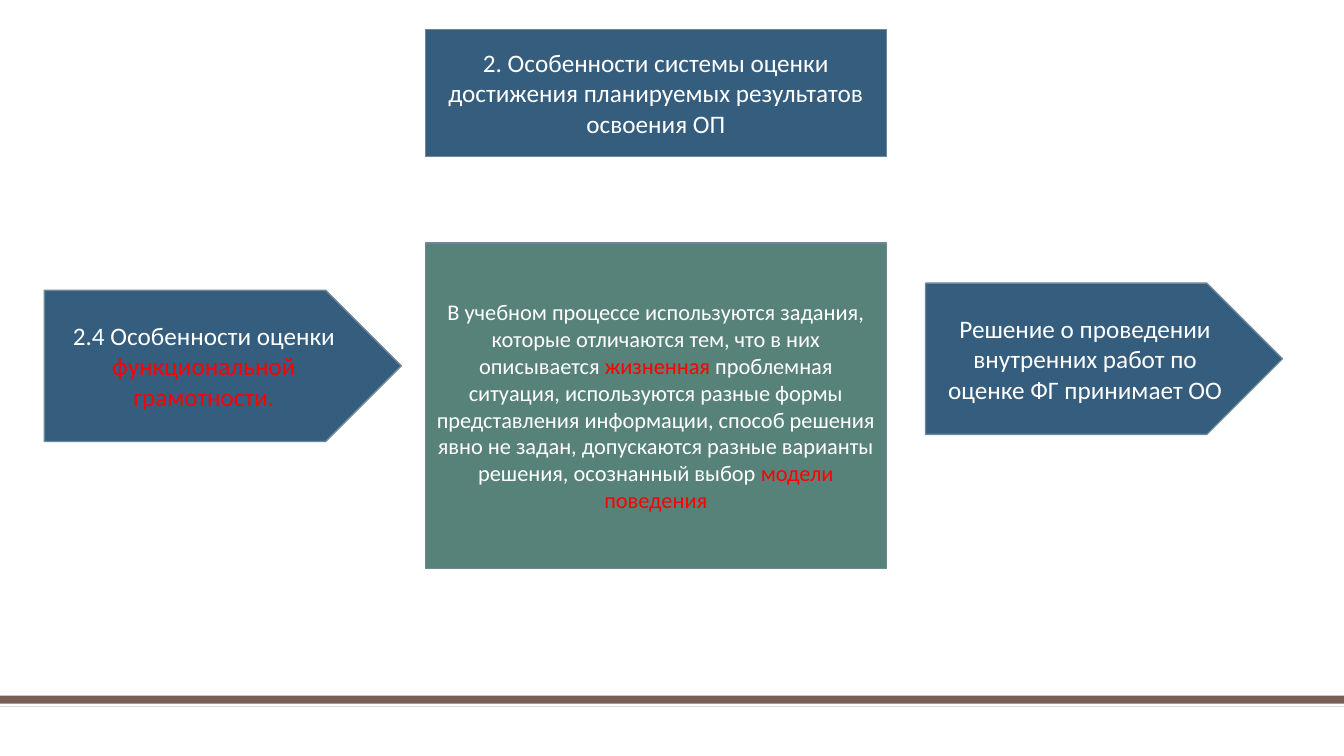
"""Build a slide on how achievement of planned learning results is assessed."""
from typing import NamedTuple

from pptx import Presentation
from pptx import util as u
from pptx.dml.color import RGBColor
from pptx.enum import shapes, text

PX = u.Inches(0.01)
SLIDE_WIDTH, SLIDE_HEIGHT = 1333, 750

WHITE = RGBColor(0xFF, 0xFF, 0xFF)
RED = RGBColor(0xFF, 0x00, 0x00)
BLUE = RGBColor(0x35, 0x5D, 0x7E)
GREEN = RGBColor(0x57, 0x82, 0x79)
OUTLINE = RGBColor(0x6D, 0x87, 0x9B)
BROWN = RGBColor(0x77, 0x5F, 0x55)

RECTANGLE = shapes.MSO_SHAPE.RECTANGLE
ARROW = shapes.MSO_SHAPE.PENTAGON


class Box(NamedTuple):
    left: int
    top: int
    width: int
    height: int


class Run(NamedTuple):
    text: str
    color: RGBColor = WHITE


class Block(NamedTuple):
    kind: shapes.MSO_SHAPE
    box: Box
    fill: RGBColor
    runs: list[Run]
    size: int = 18


FOOTER_BARS = [
    (Box(0, 690, SLIDE_WIDTH, 11), BROWN),
    (Box(0, 698, SLIDE_WIDTH, 3), WHITE),
]

TITLE_BOX = Box(422, 29, 457, 126)
TITLE = [Run("2. Особенности системы оценки достижения планируемых результатов освоения ОП")]

BLOCKS = [
    Block(ARROW, Box(44, 288, 354, 150), BLUE, [
        Run("2.4 Особенности оценки "),
        Run("функциональной грамотности.", RED),
    ]),
    Block(RECTANGLE, Box(422, 241, 457, 323), GREEN, [
        Run("В учебном процессе используются задания, которые отличаются тем, "
            "что в них описывается "),
        Run("жизненная ", RED),
        Run("проблемная ситуация, используются разные формы представления "
            "информации, способ решения явно не задан, допускаются разные "
            "варианты решения, осознанный выбор "),
        Run("модели поведения", RED),
    ], size=16),
    Block(ARROW, Box(918, 281, 354, 150), BLUE, [
        Run("Решение о проведении внутренних работ по оценке ФГ принимает ОО"),
    ]),
]


def add_box(slide, kind: shapes.MSO_SHAPE, box: Box):
    shape = slide.shapes.add_shape(kind, *(side * PX for side in box))
    shape.shadow.inherit = False
    return shape


def paint(shape, fill: RGBColor, *, outline: RGBColor | None = None) -> None:
    shape.fill.solid()
    shape.fill.fore_color.rgb = fill
    if outline is None:
        shape.line.fill.background()
    else:
        shape.line.color.rgb = outline
        shape.line.width = u.Pt(1)


def write(shape, runs: list[Run], *, size: int = 18, font: str = "Calibri") -> None:
    frame = shape.text_frame
    frame.word_wrap = True
    frame.auto_size = text.MSO_AUTO_SIZE.NONE
    frame.vertical_anchor = text.MSO_ANCHOR.MIDDLE
    paragraph = frame.paragraphs[0]
    paragraph.alignment = text.PP_ALIGN.CENTER
    for item in runs:
        run = paragraph.add_run()
        run.text = item.text
        run.font.name = font
        run.font.size = u.Pt(size)
        run.font.color.rgb = item.color


def add_title(slide) -> None:
    title = slide.shapes.title
    title.left, title.top, title.width, title.height = (side * PX for side in TITLE_BOX)
    paint(title, BLUE, outline=OUTLINE)
    write(title, TITLE)


def add_block(slide, block: Block) -> None:
    shape = add_box(slide, block.kind, block.box)
    paint(shape, block.fill, outline=OUTLINE)
    write(shape, block.runs, size=block.size)


def main() -> None:
    presentation = Presentation()
    presentation.slide_width = SLIDE_WIDTH * PX
    presentation.slide_height = SLIDE_HEIGHT * PX
    title_only = presentation.slide_layouts.get_by_name("Title Only")
    slide = presentation.slides.add_slide(title_only)
    for box, color in FOOTER_BARS:
        paint(add_box(slide, RECTANGLE, box), color)
    add_title(slide)
    for block in BLOCKS:
        add_block(slide, block)
    presentation.save("out.pptx")


if __name__ == "__main__":
    main()
